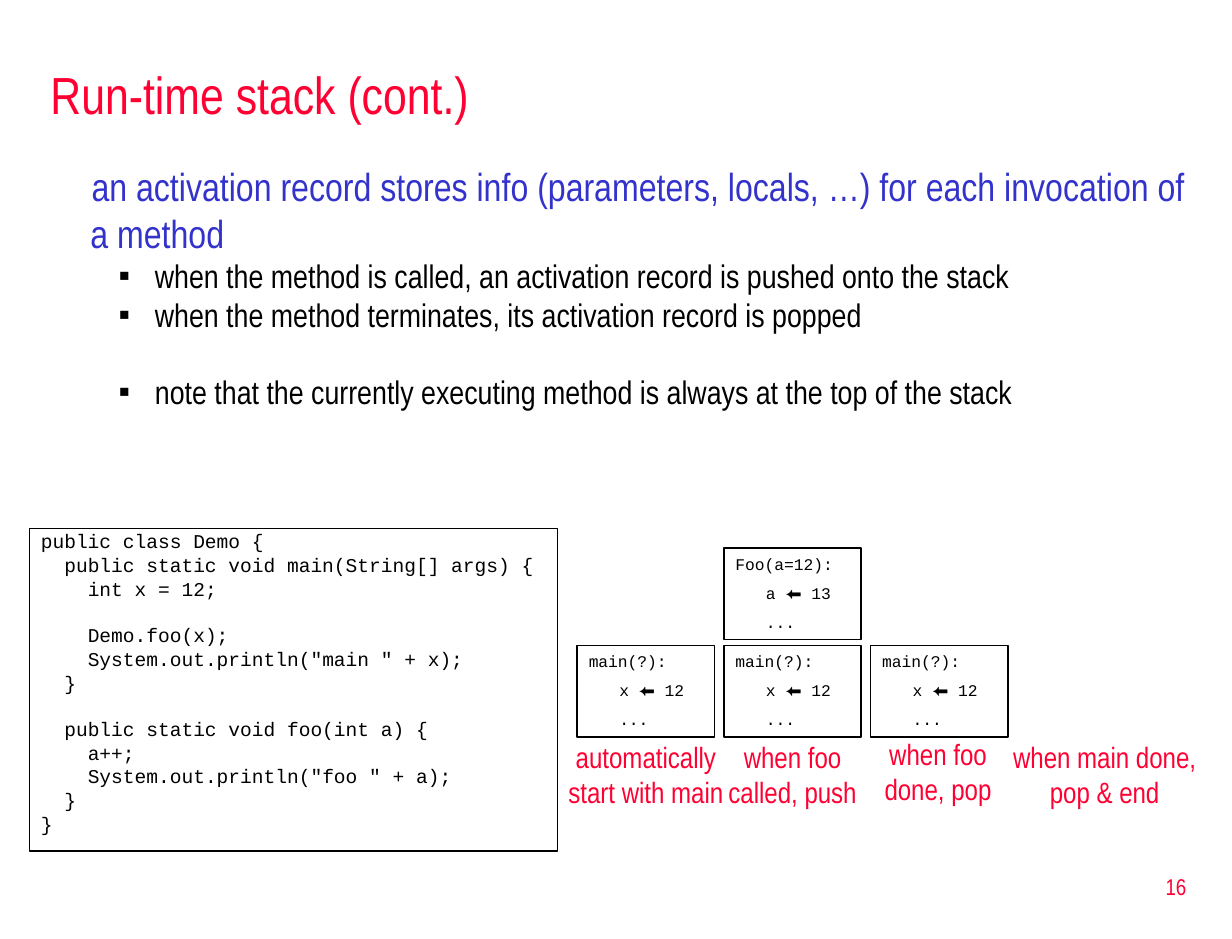
import pptx
import pptx.dml.color
import pptx.enum.shapes
import pptx.enum.text
import pptx.oxml
import pptx.util
from dataclasses import dataclass

Inches = pptx.util.Inches
Align = pptx.enum.text.PP_ALIGN
Anchor = pptx.enum.text.MSO_ANCHOR


@dataclass(frozen=True)
class Theme:
    red: str = "FF0033"
    blue: str = "3333CC"
    black: str = "000000"
    prose: str = "Arial Narrow"
    mono: str = "Courier New"
    title: float = 32
    lead: float = 24
    item: float = 20
    caption: float = 18
    number: float = 14
    code: float = 12
    record: float = 10


def write_paragraph(frame, text, *, font, size, color, align=Align.LEFT, before=0,
                    spacing=1.0, margin=0, indent=0, level=0, bullet=None):
    first = frame.paragraphs[0]
    paragraph = frame.add_paragraph() if first.runs else first
    paragraph.level = level
    paragraph.alignment = align
    paragraph.space_before = pptx.util.Pt(before)
    paragraph.line_spacing = spacing
    properties = paragraph._p.get_or_add_pPr()
    properties.set("marL", str(Inches(margin)))
    properties.set("indent", str(Inches(indent)))
    tag = "a:buChar" if bullet else "a:buNone"
    mark = pptx.oxml.parse_xml(f"<{tag} {pptx.oxml.ns.nsdecls('a')}/>")
    if bullet:
        mark.set("char", bullet)
    properties.append(mark)
    run = paragraph.add_run()
    run.text = text
    run.font.name = font
    run.font.size = pptx.util.Pt(size)
    run.font.color.rgb = pptx.dml.color.RGBColor.from_string(color)


class SlideBuilder:
    def __init__(self, slide, theme):
        self.slide = slide
        self.theme = theme

    def prepare(self, shape, anchor=Anchor.TOP):
        frame = shape.text_frame
        frame.word_wrap = True
        frame.auto_size = pptx.enum.text.MSO_AUTO_SIZE.NONE
        frame.vertical_anchor = anchor
        return frame

    def place(self, shape, left, top, width, height):
        shape.left, shape.top = Inches(left), Inches(top)
        shape.width, shape.height = Inches(width), Inches(height)

    def title(self, text, *area):
        shape = self.slide.shapes.title
        self.place(shape, *area)
        write_paragraph(self.prepare(shape, Anchor.MIDDLE), text, font=self.theme.prose,
                        size=self.theme.title, color=self.theme.red)

    def body(self, lead, items, *area):
        shape = self.slide.placeholders[1]
        self.place(shape, *area)
        frame = self.prepare(shape)
        write_paragraph(frame, lead, font=self.theme.prose, size=self.theme.lead,
                        color=self.theme.blue, before=5.5, indent=0.01)
        for text, before in items:
            write_paragraph(frame, text, font=self.theme.prose, size=self.theme.item,
                            color=self.theme.black, before=before, spacing=0.8,
                            margin=0.55, indent=-0.31, level=1, bullet="▪")

    def label(self, text, *area, size, align=Align.CENTER, anchor=Anchor.TOP, before=0):
        shape = self.slide.shapes.add_textbox(*map(Inches, area))
        write_paragraph(self.prepare(shape, anchor), text, font=self.theme.prose, size=size,
                        color=self.theme.red, align=align, before=before)

    def box(self, *area, line_width):
        shape = self.slide.shapes.add_shape(
            pptx.enum.shapes.MSO_SHAPE.RECTANGLE, *map(Inches, area))
        shape.shadow.inherit = False
        shape.fill.background()
        shape.line.color.rgb = pptx.dml.color.RGBColor.from_string(self.theme.black)
        shape.line.width = pptx.util.Pt(line_width)
        return self.prepare(shape)

    def code(self, lines, *area):
        frame = self.box(*area, line_width=0.75)
        for depth, text, before in lines:
            write_paragraph(frame, text, font=self.theme.mono, size=self.theme.code,
                            color=self.theme.black, before=before, spacing=0.8,
                            margin=0.2 * depth)

    def record(self, heading, assignment, left, top):
        frame = self.box(left, top, 1.17, 0.78, line_width=1)
        for text, margin in ((heading, 0), (assignment, 0.26), ("...", 0.26)):
            write_paragraph(frame, text, font=self.theme.mono, size=self.theme.record,
                            color=self.theme.black, before=5.75, margin=margin)


def main():
    presentation = pptx.Presentation()
    presentation.slide_width = Inches(10.5)
    presentation.slide_height = Inches(8)
    theme = Theme()
    builder = SlideBuilder(
        presentation.slides.add_slide(presentation.slide_layouts[1]), theme)

    builder.label("16", 8.02, 7.29, 2.19, 0.53, size=theme.number,
                  align=Align.RIGHT, anchor=Anchor.MIDDLE)
    builder.title("Run-time stack (cont.)", 0.33, 0.42, 9.92, 0.75)

    item_gap, section_gap = 4.8, 28
    builder.body(
        "an activation record stores info (parameters, locals, …) for each invocation of a method",
        [("when the method is called, an activation record is pushed onto the stack", item_gap),
         ("when the method terminates, its activation record is popped", item_gap),
         ("note that the currently executing method is always at the top of the stack",
          section_gap)],
        0.67, 1.33, 9.6, 2.25)

    line_gap, block_gap = 3, 17
    builder.code(
        [(0, "public class Demo {", line_gap),
         (1, "public static void main(String[] args) {", line_gap),
         (2, "int x = 12;", line_gap),
         (2, "Demo.foo(x);", block_gap),
         (2, 'System.out.println("main " + x);', line_gap),
         (1, "}", line_gap),
         (1, "public static void foo(int a) {", block_gap),
         (2, "a++;", line_gap),
         (2, 'System.out.println("foo " + a);', line_gap),
         (1, "}", line_gap),
         (0, "}", line_gap)],
        0.25, 4.5, 4.5, 2.75)

    for column in range(3):
        builder.record("main(?):", "x ⬅ 12", 4.92 + 1.25 * column, 5.5)
    builder.record("Foo(a=12):", "a ⬅ 13", 6.17, 4.67)

    for text, left, top, width in (
            ("automatically start with main", 4.67, 6.25, 1.67),
            ("when foo called, push", 5.92, 6.25, 1.67),
            ("when foo done, pop", 7.33, 6.22, 1.33),
            ("when main done, pop & end", 8.5, 6.25, 1.83)):
        builder.label(text, left, top, width, 0.7, size=theme.caption, before=10)

    presentation.save("out.pptx")


if __name__ == "__main__":
    main()
